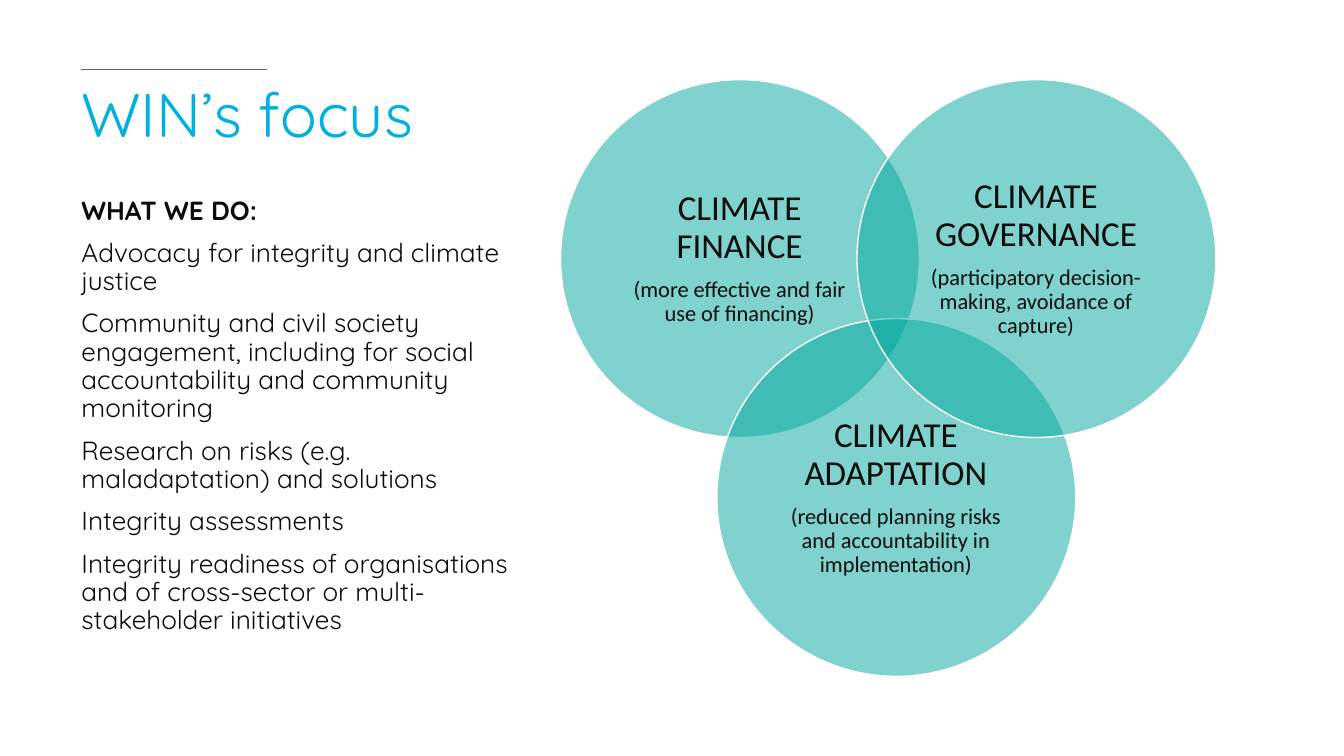
import pptx
import pptx.util
import pptx.dml.color
import pptx.enum.shapes
import pptx.enum.text
import pptx.oxml
import pptx.oxml.ns
from lxml import etree

Inches = pptx.util.Inches
Pt = pptx.util.Pt
RGBColor = pptx.dml.color.RGBColor
ALIGN = pptx.enum.text.PP_ALIGN
ANCHOR = pptx.enum.text.MSO_ANCHOR

BLUE = RGBColor(0x00, 0xB0, 0xE1)
TEAL = RGBColor(0x00, 0xA7, 0x9D)
INK = RGBColor(0x0C, 0x0C, 0x0C)
GRAY = RGBColor(0x61, 0x61, 0x61)
WHITE = RGBColor(0xFF, 0xFF, 0xFF)

CIRCLE_WIDTH, CIRCLE_HEIGHT = 3.56, 3.55
LABEL_SIZE = 2.51
LABEL_OFFSET = 0.52

ACTIVITIES = [
    "Advocacy for integrity and climate justice",
    "Community and civil society engagement, including for social "
    "accountability and community monitoring",
    "Research on risks (e.g. maladaptation) and solutions",
    "Integrity assessments",
    "Integrity readiness of organisations and of cross-sector or "
    "multi-stakeholder initiatives",
]

# left, top, heading, detail
FOCUS_AREAS = [
    (5.56, 0.79, "CLIMATE FINANCE", "(more effective and fair use of financing)"),
    (7.11, 3.16, "CLIMATE ADAPTATION",
     "(reduced planning risks and accountability in implementation)"),
    (8.5, 0.79, "CLIMATE GOVERNANCE",
     "(participatory decision-making, avoidance of capture)"),
]


def add_text_frame(slide, left, top, width, height, anchor=ANCHOR.TOP):
    box = slide.shapes.add_textbox(
        Inches(left), Inches(top), Inches(width), Inches(height))
    frame = box.text_frame
    frame.word_wrap = True
    frame.vertical_anchor = anchor
    return frame


def add_paragraph(frame, text, size, font="Quicksand", color=INK, bold=False,
                  align=ALIGN.LEFT, before=0, after=0):
    """Fill the frame's empty first paragraph, or append another one."""
    paragraph = frame.paragraphs[0]
    if paragraph.runs:
        paragraph = frame.add_paragraph()
    paragraph.alignment = align
    paragraph.line_spacing = 0.9
    paragraph.space_before = Pt(before)
    paragraph.space_after = Pt(after)
    run = paragraph.add_run()
    run.text = text
    run.font.name = font
    run.font.size = Pt(size)
    run.font.bold = bold
    run.font.color.rgb = color


def add_rule(slide, left, right, top):
    rule = slide.shapes.add_connector(
        pptx.enum.shapes.MSO_CONNECTOR.STRAIGHT,
        Inches(left), Inches(top), Inches(right), Inches(top))
    rule.line.color.rgb = GRAY
    rule.line.width = Pt(1)
    properties = rule._element.spPr
    etree.SubElement(properties, pptx.oxml.ns.qn("a:effectLst"))


def add_circle(slide, left, top):
    circle = slide.shapes.add_shape(
        pptx.enum.shapes.MSO_SHAPE.OVAL, Inches(left), Inches(top),
        Inches(CIRCLE_WIDTH), Inches(CIRCLE_HEIGHT))
    circle.shadow.inherit = False
    circle.fill.solid()
    circle.fill.fore_color.rgb = TEAL
    circle.line.color.rgb = WHITE
    circle.line.width = Pt(1)
    fill = circle._element.spPr.find(pptx.oxml.ns.qn("a:solidFill"))
    alpha = etree.SubElement(fill[0], pptx.oxml.ns.qn("a:alpha"))
    alpha.set("val", "50000")


def add_focus_area(slide, left, top, heading, detail):
    add_circle(slide, left, top)
    frame = add_text_frame(slide, left + LABEL_OFFSET, top + LABEL_OFFSET,
                           LABEL_SIZE, LABEL_SIZE, anchor=ANCHOR.MIDDLE)
    frame.margin_top = frame.margin_bottom = Inches(0.1)
    for text, size in ((heading, 25), (detail, 16)):
        add_paragraph(frame, text, size, font="Calibri", align=ALIGN.CENTER,
                      after=round(size * 0.35, 2))


def main():
    presentation = pptx.Presentation()
    presentation.slide_width = Inches(13.33)
    presentation.slide_height = Inches(7.5)
    slide = presentation.slides.add_slide(presentation.slide_layouts[6])

    add_rule(slide, 0.8, 2.65, 0.69)
    title = add_text_frame(slide, 0.71, 0.42, 3.86, 1.49, anchor=ANCHOR.MIDDLE)
    add_paragraph(title, "WIN’s focus", 44, color=BLUE)

    body = add_text_frame(slide, 0.71, 1.91, 4.46, 4.81)
    add_paragraph(body, "WHAT WE DO:", 18.7, bold=True)
    for activity in ACTIVITIES:
        add_paragraph(body, activity, 18.7, before=10)

    for focus_area in FOCUS_AREAS:
        add_focus_area(slide, *focus_area)

    presentation.save("out.pptx")


if __name__ == "__main__":
    main()
